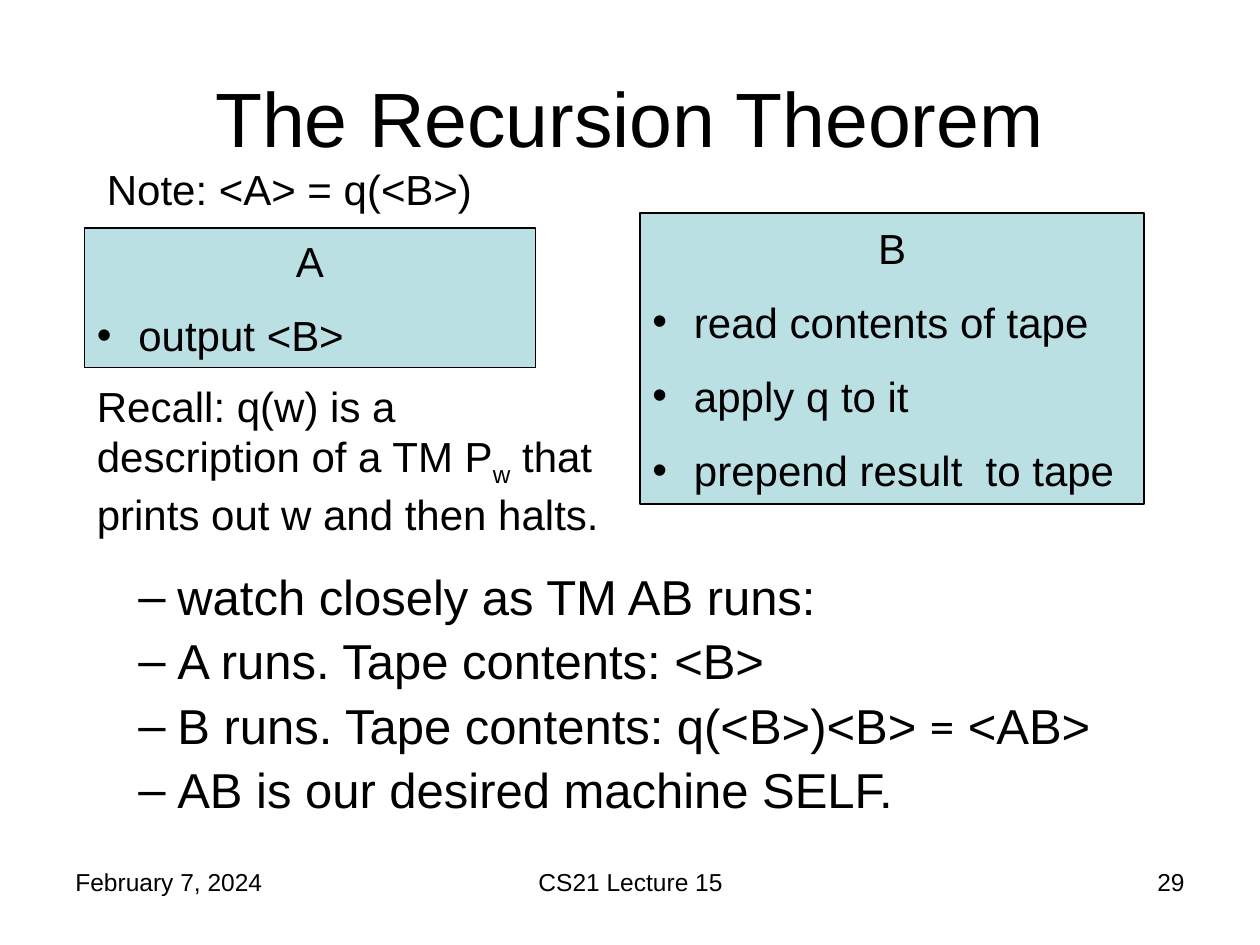
from lxml.etree import SubElement
from pptx import Presentation
from pptx.dml.color import RGBColor
from pptx.enum.shapes import MSO_SHAPE
from pptx.enum.text import MSO_ANCHOR, PP_ALIGN
from pptx.oxml.ns import qn
from pptx.util import Inches, Pt

BLACK, PALE_TEAL = "000000", "BBE0E3"


def color(hex_string):
    return RGBColor.from_string(hex_string)


def add_run(paragraph, text, size, font="Arial", baseline=None):
    run = paragraph.add_run()
    run.text = text
    run.font.size = Pt(size)
    run.font.name = font
    run.font.color.rgb = color(BLACK)
    if baseline:
        run.font._element.set("baseline", str(baseline))


def set_bullet(paragraph, mark, margin, hanging):
    properties = paragraph._p.get_or_add_pPr()
    properties.set("marL", str(Inches(margin)))
    properties.set("indent", str(-Inches(hanging)))
    SubElement(properties, qn("a:buFont"), typeface="Arial")
    SubElement(properties, qn("a:buChar"), char=mark)


def add_text(slide, box, runs, size, align=PP_ALIGN.LEFT, anchor=MSO_ANCHOR.TOP):
    frame = slide.shapes.add_textbox(*map(Inches, box)).text_frame
    frame.word_wrap = True
    frame.vertical_anchor = anchor
    paragraph = frame.paragraphs[0]
    paragraph.alignment = align
    for text, *style in runs:
        add_run(paragraph, text, size, *style)


def add_machine(slide, box, name, steps):
    """Filled box with a centred machine name above its bulleted steps."""
    machine = slide.shapes.add_shape(MSO_SHAPE.RECTANGLE, *map(Inches, box))
    machine.shadow.inherit = False
    machine.fill.solid()
    machine.fill.fore_color.rgb = color(PALE_TEAL)
    machine.line.color.rgb = color(BLACK)
    machine.line.width = Pt(0.75)
    frame = machine.text_frame
    frame.word_wrap = True
    frame.vertical_anchor = MSO_ANCHOR.MIDDLE
    heading = frame.paragraphs[0]
    heading.alignment = PP_ALIGN.CENTER
    add_run(heading, name, 24)
    for step in steps:
        paragraph = frame.add_paragraph()
        paragraph.alignment = PP_ALIGN.LEFT
        paragraph.space_before = Pt(13.5)
        set_bullet(paragraph, "•", 0.33, 0.33)
        add_run(paragraph, step, 24)


def add_trace(slide, box, lines):
    """Dashed list of what happens as the machine runs."""
    frame = slide.shapes.add_textbox(*map(Inches, box)).text_frame
    frame.word_wrap = True
    for index, runs in enumerate(lines):
        paragraph = frame.add_paragraph() if index else frame.paragraphs[0]
        paragraph.line_spacing = 0.9
        paragraph.space_before = Pt(6.5 if index else 0)
        set_bullet(paragraph, "–", 0.81, 0.31)
        for text, *style in runs:
            add_run(paragraph, text, 28, *style)


def add_footer(slide, top, height, date, lecture, number):
    for left, width, text, align in (
        (0.5, 2.33, date, PP_ALIGN.LEFT),
        (3.42, 3.17, lecture, PP_ALIGN.CENTER),
        (7.17, 2.33, number, PP_ALIGN.RIGHT),
    ):
        add_text(slide, (left, top, width, height), [(text,)], 14, align)


def main():
    deck = Presentation()
    deck.slide_width, deck.slide_height = Inches(10), Inches(7.5)
    slide = deck.slides.add_slide(deck.slide_layouts[6])

    # Title
    add_text(slide, (0.5, 0.3, 9, 1.25), [("The Recursion Theorem",)], 44,
             PP_ALIGN.CENTER, MSO_ANCHOR.MIDDLE)

    # Run of the combined machine
    add_trace(slide, (0.5, 4.5, 9, 2.2), [
        [("watch closely as TM AB runs:",)],
        [("A runs. Tape contents: <B>",)],
        [("B runs. Tape contents: q(<B>)<B> ",), ("=", "Calibri"), (" <AB>",)],
        [("AB is our desired machine SELF.",)],
    ])

    # The two machines
    add_machine(slide, (0.67, 1.81, 3.58, 1.11), "A", ["output <B>"])
    add_machine(slide, (5.08, 1.69, 4, 2.31), "B",
                ["read contents of tape", "apply q to it", "prepend result  to tape"])

    # Remarks around machine A
    add_text(slide, (0.75, 1.25, 3.67, 0.5), [("Note: <A> = q(<B>)",)], 24)
    add_text(slide, (0.67, 2.97, 4.25, 1.3), [
        ("Recall: q(w) is a description of a TM P",),
        ("w", "Arial", -25000),
        (" that prints out w and then halts.",),
    ], 24)

    add_footer(slide, 6.83, 0.52, "February 7, 2024", "CS21 Lecture 15", "29")
    deck.save("out.pptx")


if __name__ == "__main__":
    main()
